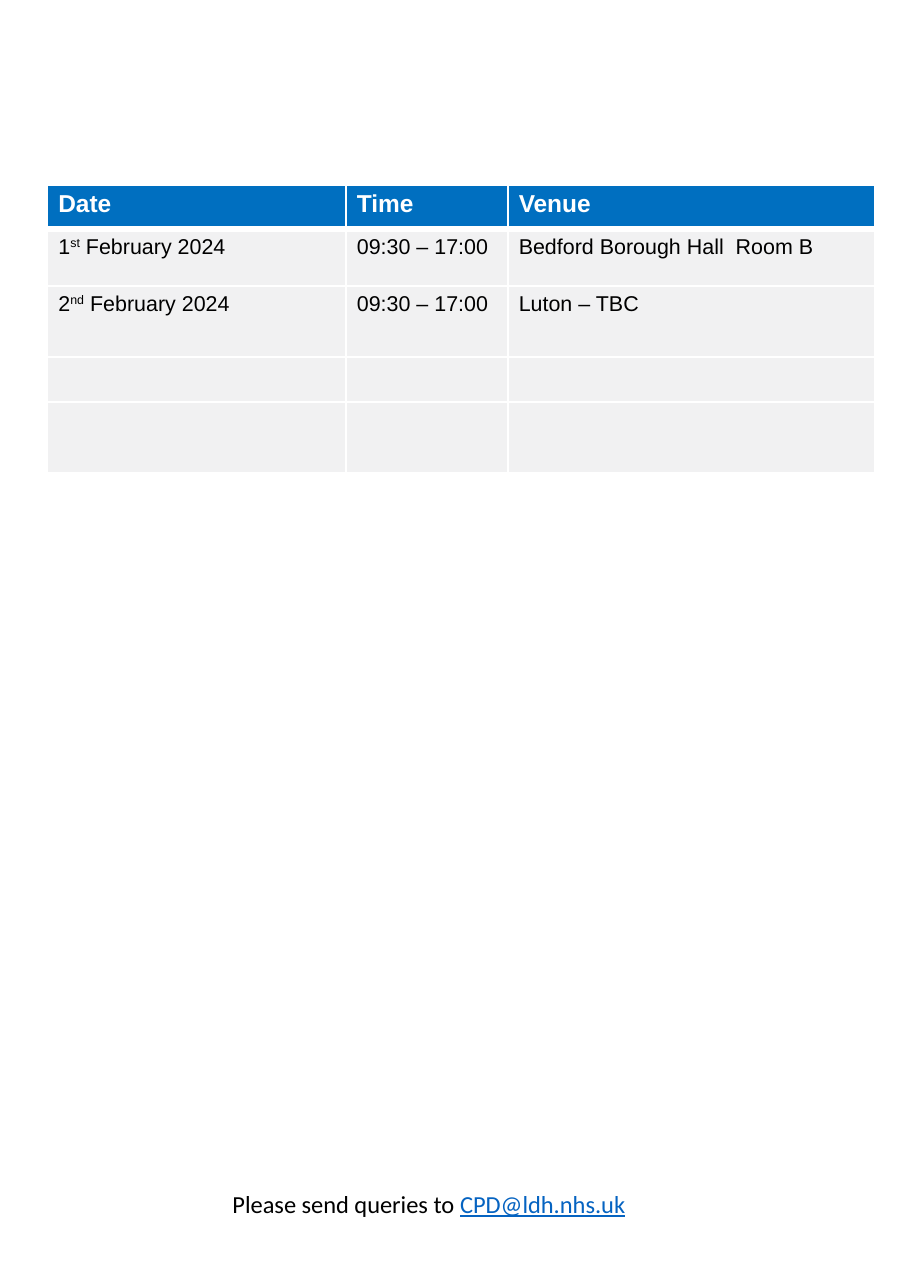
"""Build a portrait page with a course date table and a contact line."""
from lxml import etree
from pptx import Presentation
from pptx import util as u
from pptx.dml.color import RGBColor
from pptx.enum import text
from pptx.oxml import ns

WHITE = RGBColor(0xFF, 0xFF, 0xFF)
BLACK = RGBColor(0x00, 0x00, 0x00)
HEADER_BLUE = RGBColor(0x00, 0x6F, 0xC0)
ROW_GREY = RGBColor(0xF1, 0xF1, 0xF2)
LINK_BLUE = RGBColor(0x05, 0x63, 0xC1)

COLUMN_WIDTHS = [2.71, 1.47, 3.33]
ROW_HEIGHTS = [0.4, 0.52, 0.64, 0.4, 0.65]
SESSIONS = [
    [["Date"], ["Time"], ["Venue"]],
    [["1", "st", " February 2024"], ["09:30 – 17:00"], ["Bedford Borough Hall  Room B"]],
    [["2", "nd", " February 2024"], ["09:30 – 17:00"], ["Luton – TBC"]],
]


class Page:
    def __init__(self, deck):
        self.slide = deck.slides.add_slide(deck.slide_layouts[6])

    def style(self, font, name, size, color, bold=False):
        font.name = name
        font.size = u.Pt(size)
        font.color.rgb = color
        font.bold = bold

    def borders(self, cell, widths):
        properties = cell._tc.get_or_add_tcPr()
        for place, (side, points) in enumerate(widths.items()):
            line = etree.Element(ns.qn(f"a:ln{side}"), w=str(u.Pt(points)))
            fill = etree.SubElement(line, ns.qn("a:solidFill"))
            etree.SubElement(fill, ns.qn("a:srgbClr"), val=str(WHITE))
            properties.insert(place, line)

    def cell_text(self, cell, parts, header):
        cell.margin_left = cell.margin_right = cell.margin_bottom = 0
        cell.margin_top = u.Inches(0.05)
        para = cell.text_frame.paragraphs[0]
        para._p.get_or_add_pPr().set("marL", str(u.Inches(0.1)))
        for index, part in enumerate(parts):
            span = para.add_run()
            span.text = part
            if index == 1:
                span._r.get_or_add_rPr().set("baseline", "30000")
        self.style(para.font, "Arial", 16 if header else 14,
                   WHITE if header else BLACK, header)

    def table(self, left, top, widths, heights, content):
        frame = self.slide.shapes.add_table(
            len(heights), len(widths), u.Inches(left), u.Inches(top),
            u.Inches(sum(widths)), u.Inches(sum(heights)))
        table = frame.table
        table.horz_banding = False
        for column, width in zip(table.columns, widths):
            column.width = u.Inches(width)
        for index, (row, height) in enumerate(zip(table.rows, heights)):
            row.height = u.Inches(height)
            for cell in row.cells:
                cell.fill.solid()
                cell.fill.fore_color.rgb = ROW_GREY if index else HEADER_BLUE
                self.borders(cell, {"L": 1.5, "R": 1.5,
                                    "T": 4.5 if index == 1 else 1.5,
                                    "B": 1.5 if index else 4.5})
        for index, line in enumerate(content):
            for cell, parts in zip(table.rows[index].cells, line):
                self.cell_text(cell, parts, index == 0)

    def contact(self, left, top, width, height, lead, address):
        box = self.slide.shapes.add_textbox(
            u.Inches(left), u.Inches(top), u.Inches(width), u.Inches(height))
        frame = box.text_frame
        frame.word_wrap = True
        frame.auto_size = text.MSO_AUTO_SIZE.SHAPE_TO_FIT_TEXT
        frame.margin_right = u.Inches(0.2)
        para = frame.paragraphs[0]
        para.alignment = text.PP_ALIGN.CENTER
        para.add_run().text = lead
        span = para.add_run()
        span.text = address
        span.font.color.rgb = LINK_BLUE
        span.font.underline = True
        self.style(para.font, "Calibri", 16, BLACK)


def main():
    deck = Presentation()
    deck.slide_width = u.Inches(8.27)
    deck.slide_height = u.Inches(11.69)
    page = Page(deck)
    page.table(0.43, 1.68, COLUMN_WIDTHS, ROW_HEIGHTS, SESSIONS)
    page.contact(0.43, 10.74, 7.03, 0.37, "Please send queries to ", "CPD@ldh.nhs.uk")
    deck.save("out.pptx")


if __name__ == "__main__":
    main()
